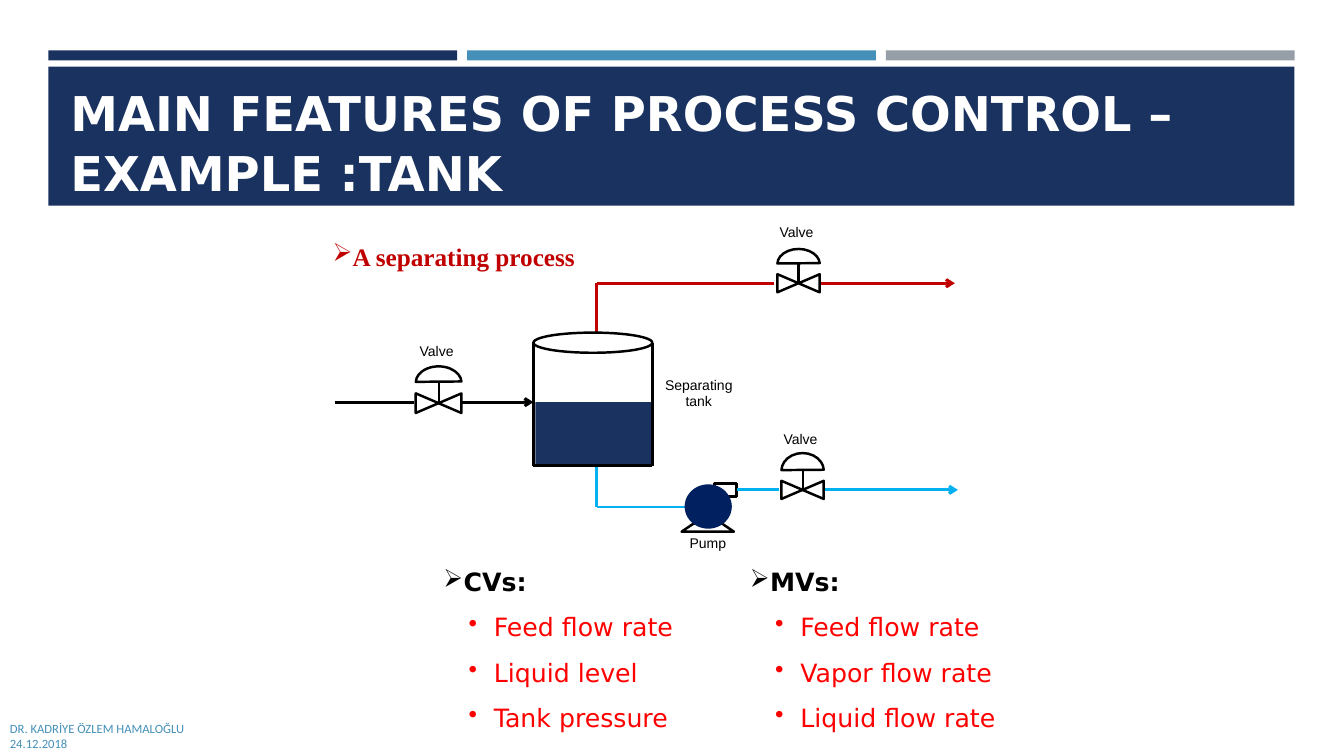
from lxml.etree import SubElement
from pptx import Presentation
from pptx.dml.color import RGBColor
from pptx.enum.shapes import MSO_CONNECTOR, MSO_SHAPE
from pptx.enum.text import MSO_ANCHOR, PP_ALIGN
from pptx.oxml.ns import qn
from pptx.util import Inches, Pt

W, H = 13.33, 7.5
NAVY, BLUE, GRAY = "1A3260", "4590B8", "969FA7"
BLACK, VAPOR, LIQUID = "000000", "C00000", "00B0F0"


def color(fmt, value):
    """Give a fill, line or font colour from a hex string."""
    fmt.rgb = RGBColor.from_string(value)


def shape(s, kind, x, y, w, h, fill=None, line=None, rot=0, adj=()):
    """Add a preset shape; lengths in inches."""
    sp = s.shapes.add_shape(kind, Inches(x), Inches(y), Inches(w), Inches(h))
    sp.shadow.inherit = False
    sp.rotation = rot
    for i, value in enumerate(adj):
        sp.adjustments[i] = value
    if fill:
        sp.fill.solid()
        color(sp.fill.fore_color, fill)
    else:
        sp.fill.background()
    if line:
        color(sp.line.color, line)
        sp.line.width = Pt(1.75)
    else:
        sp.line.fill.background()
    return sp


def pipe(s, *points, c=BLACK, width=2, arrow=False):
    """Join points with straight lines; return the last one."""
    for a, b in zip(points, points[1:]):
        cx = s.shapes.add_connector(MSO_CONNECTOR.STRAIGHT, *map(Inches, a + b))
        color(cx.line.color, c)
        cx.line.width = Pt(width)
        SubElement(cx._element.spPr, qn("a:effectLst"))
    if arrow:
        SubElement(cx.line._get_or_add_ln(), qn("a:tailEnd"), type="arrow")
    return cx


def bullet(p, char, left, hang):
    """Give a paragraph a hanging bullet."""
    pPr = p._p.get_or_add_pPr()
    pPr.set("marL", str(Inches(left)))
    pPr.set("indent", str(-Inches(hang)))
    SubElement(pPr, qn("a:buChar"), char=char)


def write(p, text, font="Arial", size=10, c=BLACK, bold=False, align=PP_ALIGN.LEFT, spacing=None):
    """Fill a paragraph with formatted text."""
    p.text = text
    p.alignment = align
    if spacing:
        p.line_spacing = spacing
    for r in p.runs:
        r.font.name, r.font.size, r.font.bold = font, Pt(size), bold
        color(r.font.color, c)


def text_box(s, x, y, w, h, lines, anchor=MSO_ANCHOR.TOP, **fmt):
    """Add a wrapping text box with one paragraph per line."""
    tf = s.shapes.add_textbox(Inches(x), Inches(y), Inches(w), Inches(h)).text_frame
    tf.word_wrap = True
    tf.vertical_anchor = anchor
    for i, line in enumerate(lines):
        write(tf.paragraphs[0] if i == 0 else tf.add_paragraph(), line, **fmt)
    return tf


def header(s, x, y, w, h, title):
    """Three coloured strips above the title band."""
    gap = 0.1
    strip = (w - 2 * gap) / 3
    for i, c in enumerate((NAVY, BLUE, GRAY)):
        shape(s, MSO_SHAPE.RECTANGLE, x + i * (strip + gap), y, strip, 0.1, c)
    shape(s, MSO_SHAPE.RECTANGLE, x, y + 0.16, w, h - 0.16, NAVY)
    tf = text_box(s, x + 0.12, y + 0.25, w + 0.04, h - 0.29, [title], MSO_ANCHOR.BOTTOM,
                  font="DejaVu Sans", size=34.2, c="FFFFFF", bold=True, spacing=1.04)
    tf.margin_bottom = Inches(0.01)


def label(s, x, y, *lines):
    """Centred caption around x, starting at y."""
    text_box(s, x - 0.51, y, 1.02, 0.17 * len(lines) + 0.1, lines, align=PP_ALIGN.CENTER)


def valve(s, x, y, k=1.0, dome=0.3):
    """Control valve whose body is centred on x, y; k scales it."""
    w, h, rise = 0.18 * k, 0.21 * k, 0.19 * k
    for side, rot in ((-0.5, 90), (0.5, 270)):
        shape(s, MSO_SHAPE.ISOSCELES_TRIANGLE, x + side * h - w / 2, y - h / 2, w, h,
              line=BLACK, rot=rot)
    shape(s, MSO_SHAPE.CHORD, x - dome / 2, y - rise - h, dome, 2 * h,
          line=BLACK, rot=90, adj=(54.959, 160.448))
    pipe(s, (x, y - rise), (x, y), width=1.5)
    label(s, x - 0.02, y - 0.64 * k ** 0.2, "Valve")


def tank(s, x, y, w, h):
    """Open-topped tank, half full of liquid."""
    rim, level = 0.2, 0.62
    shape(s, MSO_SHAPE.OVAL, x, y, w, rim, line=BLACK)
    shape(s, MSO_SHAPE.RECTANGLE, x + 0.02, y + h - level - 0.01, w - 0.02, level, NAVY)
    top = y + rim / 2
    pipe(s, (x, top), (x, y + h), (x + w, y + h), (x + w, top))
    label(s, x + 1.39 * w, y + 0.29 * h, "Separating", "tank")


def pump(s, x, y, w, h):
    """Pump on its foot; returns the outlet."""
    outlet = shape(s, MSO_SHAPE.RECTANGLE, x + 0.63 * w, y, 0.42 * w, 0.13, line=BLACK)
    shape(s, MSO_SHAPE.TRAPEZOID, x, y + h - 0.08, w, 0.08, line=BLACK, adj=(1.473,))
    shape(s, MSO_SHAPE.OVAL, x + 0.03, y + 0.01, 0.9 * w, 0.44, "002060")
    label(s, x + w / 2, y + h - 0.02, "Pump")
    return outlet


def process(s, x, y, w, h):
    """Separating process with feed, vapor and liquid lines."""
    tx, ty, tw, th = x + 1.97, y + 1.12, 1.18, 1.32
    mid, end = x + 2.6, x + w
    feed, vapor, liquid, drain = y + 1.81, y + 0.63, y + 2.68, y + 2.85

    pipe(s, (x, feed), (x + 0.79, feed))
    pipe(s, (x + 1.26, feed), (tx, feed), arrow=True)
    valve(s, x + 1.03, feed + 0.01, k=1.08, dome=0.32)

    pipe(s, (mid, ty), (mid, vapor), (x + 4.36, vapor), c=VAPOR)
    pipe(s, (x + 4.81, vapor), (end - 0.03, vapor), c=VAPOR, arrow=True)
    valve(s, x + 4.6, vapor)

    pipe(s, (mid, ty + th), (mid, drain), (x + 3.47, drain), c=LIQUID)
    outlet = pump(s, x + 3.44, liquid - 0.065, 0.52, 0.48)
    link = pipe(s, (x + 4.41, liquid), (x + 4.02, liquid), c=LIQUID)
    link.end_connect(outlet, 3)
    pipe(s, (x + 4.84, liquid), (end, liquid), c=LIQUID, arrow=True)
    valve(s, x + 4.64, liquid, dome=0.35)

    tank(s, tx, ty, tw, th)
    tf = text_box(s, x - 0.12, y + 0.16, 2.68, 0.4, ["A separating process"],
                  font="Times New Roman", size=18, c=VAPOR, bold=True)
    bullet(tf.paragraphs[0], "➢", 0.2, 0.2)


def variables(s, x, y, w, h, heading, items):
    """Bulleted heading with its list of variables."""
    tf = text_box(s, x, y, w, h, [heading], font="DejaVu Sans", size=18, bold=True)
    bullet(tf.paragraphs[0], "➢", 0.2, 0.2)
    for item in items:
        p = tf.add_paragraph()
        p.level = 1
        write(p, item, font="DejaVu Sans", size=18, c="FF0000", spacing=1.5)
        bullet(p, "•", 0.5, 0.25)


def main():
    """Build and save the slide."""
    prs = Presentation()
    prs.slide_width, prs.slide_height = Inches(W), Inches(H)
    s = prs.slides.add_slide(prs.slide_layouts[6])
    header(s, 0.48, 0.5, 12.36, 1.54, "MAIN FEATURES OF PROCESS CONTROL –\vEXAMPLE :TANK")
    process(s, 3.32, 2.18, 6.18, 3.34)
    lists = {"CVs:": ("Feed flow rate", "Liquid level", "Tank pressure"),
             "MVs:": ("Feed flow rate", "Vapor flow rate", "Liquid flow rate")}
    for i, (heading, items) in enumerate(lists.items()):
        variables(s, 4.3 + 3.04 * i, 5.57, 2.76, 1.77, heading, items)
    text_box(s, 0, H - 0.4, 7.56, 0.4, ["DR. KADRİYE ÖZLEM HAMALOĞLU", "24.12.2018"],
             MSO_ANCHOR.MIDDLE, font="Calibri", size=9, c=BLUE)
    prs.save("out.pptx")


if __name__ == "__main__":
    main()
